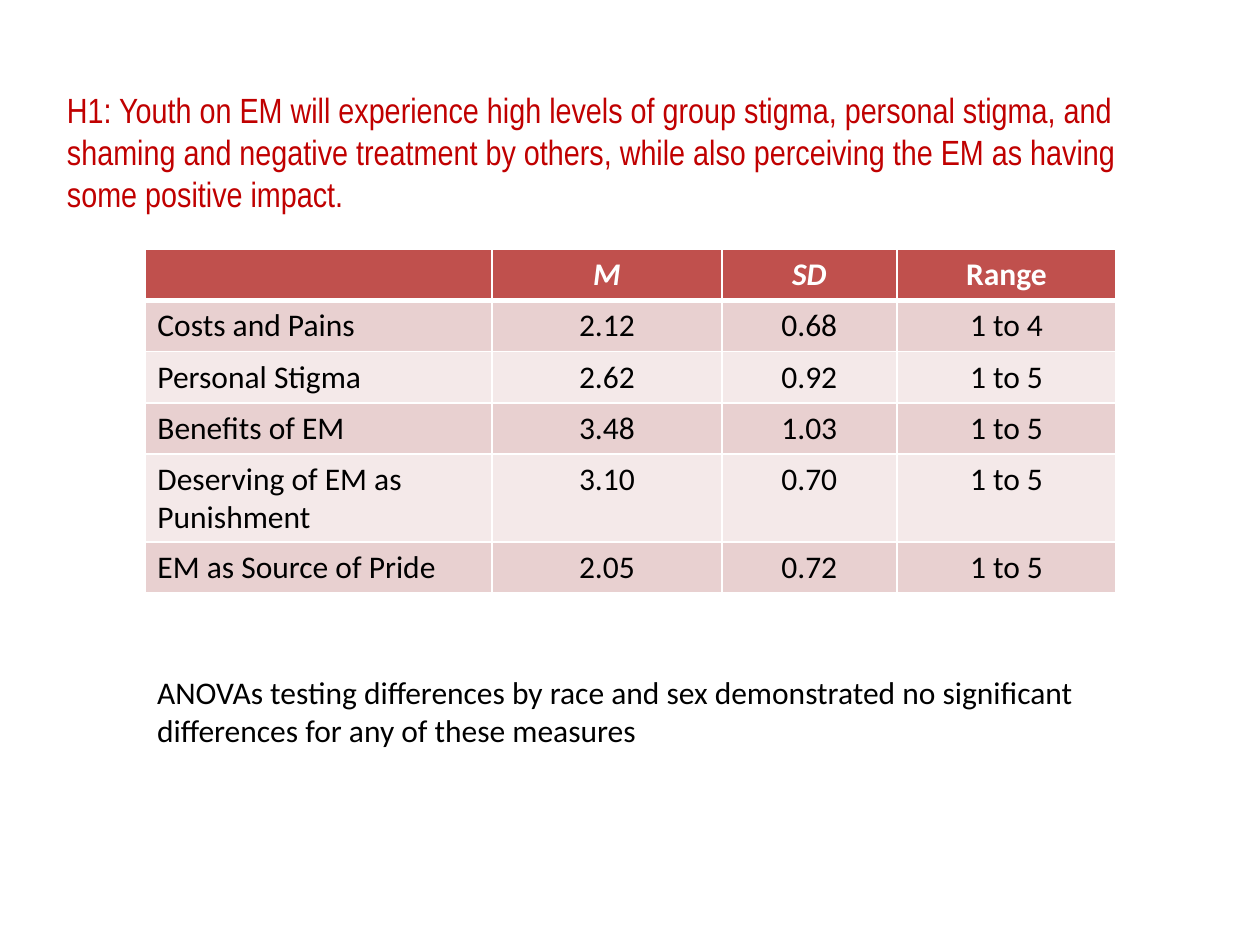
from lxml.etree import SubElement
from pptx import Presentation
from pptx.dml.color import RGBColor
from pptx.enum.text import MSO_ANCHOR, PP_ALIGN
from pptx.oxml.ns import qn
from pptx.util import Cm, Pt

TITLE = ("H1: Youth on EM will experience high levels of group stigma, personal stigma, "
         "and shaming and negative treatment by others, while also perceiving the EM "
         "as having some positive impact.")
NOTE = ("ANOVAs testing differences by race and sex demonstrated no significant "
        "differences for any of these measures")
ROWS = [
    ("", "M", "SD", "Range"),
    ("Costs and Pains", "2.12", "0.68", "1 to 4"),
    ("Personal Stigma", "2.62", "0.92", "1 to 5"),
    ("Benefits of EM", "3.48", "1.03", "1 to 5"),
    ("Deserving of EM as Punishment", "3.10", "0.70", "1 to 5"),
    ("EM as Source of Pride", "2.05", "0.72", "1 to 5"),
]
WIDTHS = (7, 4.63, 3.53, 4.42)


def color(code):
    return RGBColor.from_string(code)


class Deck:
    face = "Calibri"
    size = 18
    ink = "000000"
    paper = "FFFFFF"
    head = "C0504D"
    bands = ("F4E9E9", "E8D0D0")
    row = 1.03

    def __init__(self, show):
        self.slide = show.slides.add_slide(show.slide_layouts[6])

    def style(self, para, ink=None, size=None, face=None):
        font = para.font
        font.name = face or self.face
        font.size = Pt(size or self.size)
        font.color.rgb = color(ink or self.ink)
        return font

    def text(self, words, left, top, width, height, **look):
        box = self.slide.shapes.add_textbox(Cm(left), Cm(top), Cm(width), Cm(height))
        frame = box.text_frame
        frame.word_wrap = True
        para = frame.paragraphs[0]
        para.text = words
        self.style(para, **look)
        return frame

    def edge(self, cell, side, width):
        line = SubElement(cell._tc.get_or_add_tcPr(), qn(f"a:ln{side}"), w=str(Pt(width)))
        fill = SubElement(line, qn("a:solidFill"))
        SubElement(fill, qn("a:srgbClr"), val=self.paper)

    def cell(self, cell, words, row, col):
        top = row == 0
        # Schema order of the sides; the rule under the header is thicker
        for side, thick in (("L", False), ("R", False), ("T", row == 1), ("B", top)):
            self.edge(cell, side, 3 if thick else 1)
        cell.fill.solid()
        cell.fill.fore_color.rgb = color(self.head if top else self.bands[row % 2])
        para = cell.text_frame.paragraphs[0]
        para.text = words
        if col:
            para.alignment = PP_ALIGN.CENTER
        font = self.style(para, self.paper if top else self.ink)
        font.bold = top
        font.italic = words in ("M", "SD")

    def table(self, rows, widths, left, top):
        frame = self.slide.shapes.add_table(
            len(rows), len(widths), Cm(left), Cm(top),
            Cm(sum(widths)), Cm(self.row * len(rows)))
        grid = frame.table
        for col, width in zip(grid.columns, widths):
            col.width = Cm(width)
        for r, line in enumerate(rows):
            for c, words in enumerate(line):
                self.cell(grid.cell(r, c), words, r, c)


def main():
    show = Presentation()
    show.slide_width, show.slide_height = Cm(25.4), Cm(19.05)
    deck = Deck(show)
    title = deck.text(TITLE, 0.84, 2.24, 23.24, 2.39,
                      ink="C00000", size=20, face="Arial Narrow")
    title.vertical_anchor = MSO_ANCHOR.MIDDLE
    title.margin_left = Cm(0.51)
    title.margin_top, title.margin_bottom = Cm(0), Cm(0.76)
    deck.table(ROWS, WIDTHS, 2.92, 5.03)
    deck.text(NOTE, 2.92, 13.44, 19.99, 1.8)
    show.save("out.pptx")


if __name__ == "__main__":
    main()
